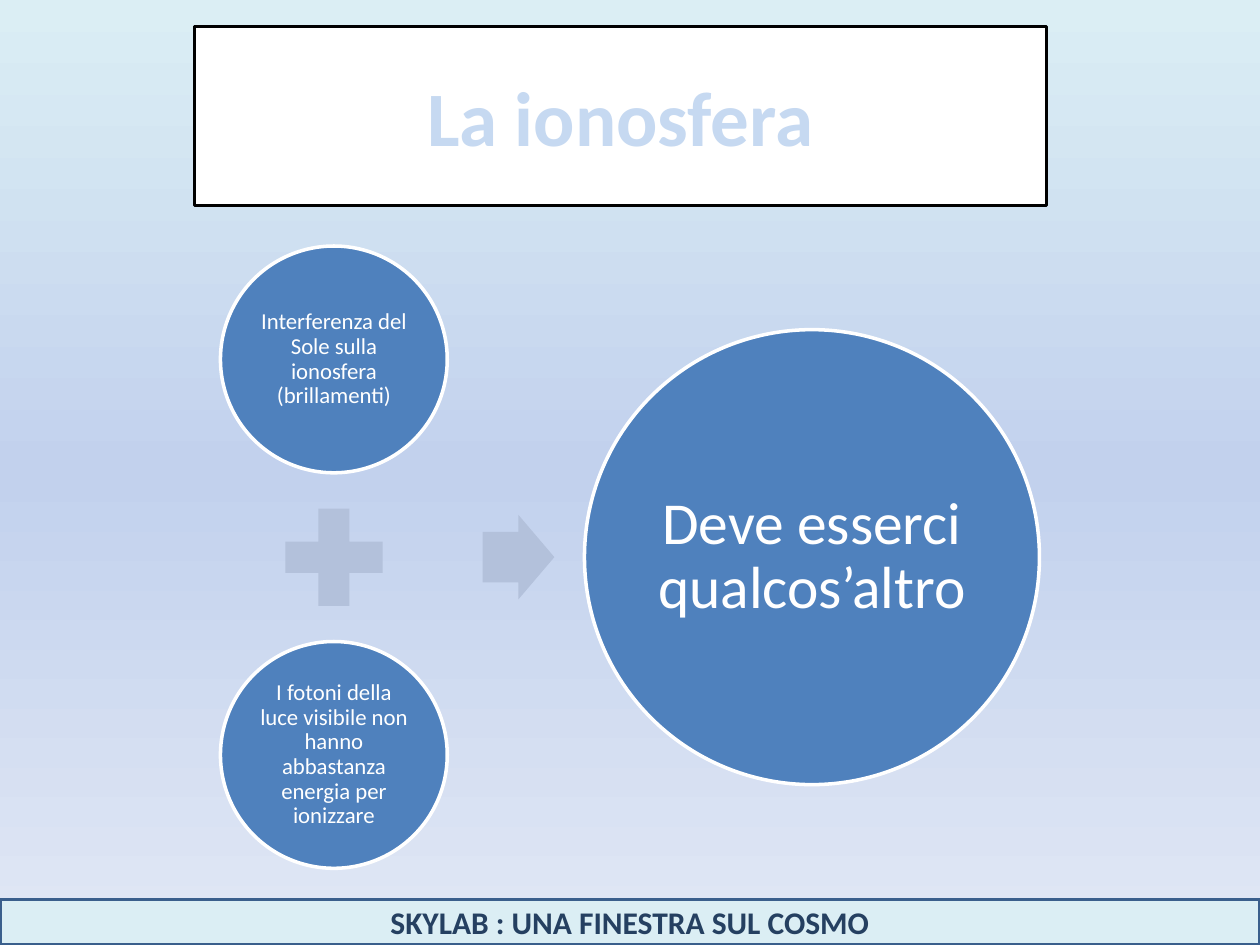
"""Build a slide in which two circles add up to a larger third one."""
from copy import deepcopy

from lxml import etree
from pptx import Presentation
from pptx import util as u
from pptx.dml.color import RGBColor
from pptx.enum import shapes, text
from pptx.oxml.ns import qn

FONT = "Calibri"
BLUE, PALE, SIGN, WHITE = "4F81BD", "DBEEF4", "B3C1DB", "FFFFFF"
GRADIENT = [(0, PALE), (50, "C2D1ED"), (100, "E1E8F5")]
TITLE = "La ionosfera"
FOOTER = "SKYLAB : UNA FINESTRA SUL COSMO"
LEFT_X, MIDDLE_Y, OFFSET_Y = 190.8, 318.4, 113
CIRCLES = [
    ("Interferenza del Sole sulla ionosfera (brillamenti)",
     LEFT_X, MIDDLE_Y - OFFSET_Y, 129.6, 13, 1.4),
    ("I fotoni della luce visibile non hanno abbastanza energia per ionizzare",
     LEFT_X, MIDDLE_Y + OFFSET_Y, 129.6, 13, 1.4),
    ("Deve esserci qualcos’altro", 464, MIDDLE_Y, 260, 34, 3.6),
]
SIGNS = [
    (shapes.MSO_SHAPE.MATH_PLUS, LEFT_X, 75.6, 75.6, ()),
    (shapes.MSO_SHAPE.RIGHT_ARROW, 296.3, 41, 48.2, (0.6, 0.5)),
]


def paint(target, value):
    target.solid()
    target.fore_color.rgb = RGBColor.from_string(value)


def outline(box, value, width):
    paint(box.line.fill, value)
    box.line.width = u.Pt(width)


def write(box, words, size, color, bold=False):
    frame = box.text_frame
    frame.word_wrap = True
    frame.auto_size = text.MSO_AUTO_SIZE.NONE
    frame.vertical_anchor = text.MSO_ANCHOR.MIDDLE
    para = frame.paragraphs[0]
    para.alignment = text.PP_ALIGN.CENTER
    span = para.add_run()
    span.text = words
    span.font.name, span.font.size, span.font.bold = FONT, u.Pt(size), bold
    paint(span.font.fill, color)
    return para, span


def add_box(page, kind, left, top, width, height, fill):
    box = page.shapes.add_shape(kind, *map(u.Pt, (left, top, width, height)))
    box.shadow.inherit = False
    paint(box.fill, fill)
    box.line.fill.background()
    return box


def add_background(page):
    fill = page.background.fill
    fill.gradient()
    fill.gradient_angle = 270
    stops = page.element.find(".//" + qn("a:gsLst"))
    stops.append(deepcopy(stops[0]))
    for stop, (place, value) in zip(fill.gradient_stops, GRADIENT):
        stop.position = place / 100
        stop.color.rgb = RGBColor.from_string(value)


def add_title(page):
    title = page.shapes.title
    title.left, title.top, title.width, title.height = map(u.Pt, (110.9, 15.1, 487.4, 102.2))
    paint(title.fill, WHITE)
    outline(title, "000000", 1.75)
    para, span = write(title, TITLE, 44, "C6D9F1", True)
    edge = etree.Element(qn("a:ln"), w=str(u.Pt(1)))
    solid = etree.SubElement(edge, qn("a:solidFill"))
    etree.SubElement(solid, qn("a:srgbClr"), val="376092")
    span.font._element.insert(0, edge)


def add_circle(page, words, x, y, size, points, inset):
    circle = add_box(page, shapes.MSO_SHAPE.OVAL, x - size / 2, y - size / 2, size, size, BLUE)
    outline(circle, WHITE, 2)
    frame = circle.text_frame
    frame.margin_left = frame.margin_right = u.Pt(inset)
    frame.margin_top = frame.margin_bottom = u.Pt(inset)
    para, span = write(circle, words, points, WHITE)
    para.line_spacing = 0.9


def main():
    deck = Presentation()
    deck.slide_width, deck.slide_height = u.Pt(720), u.Pt(540)
    page = deck.slides.add_slide(deck.slide_layouts[5])
    add_background(page)
    add_title(page)
    footer = add_box(page, shapes.MSO_SHAPE.RECTANGLE, 0, 514, 720, 26, PALE)
    outline(footer, "3A5F8C", 2)
    write(footer, FOOTER, 18, "254061", True)
    for circle in CIRCLES:
        add_circle(page, *circle)
    for kind, x, width, height, ratios in SIGNS:
        sign = add_box(page, kind, x - width / 2, MIDDLE_Y - height / 2, width, height, SIGN)
        for index, ratio in enumerate(ratios):
            sign.adjustments[index] = ratio
    deck.save("out.pptx")


if __name__ == "__main__":
    main()
